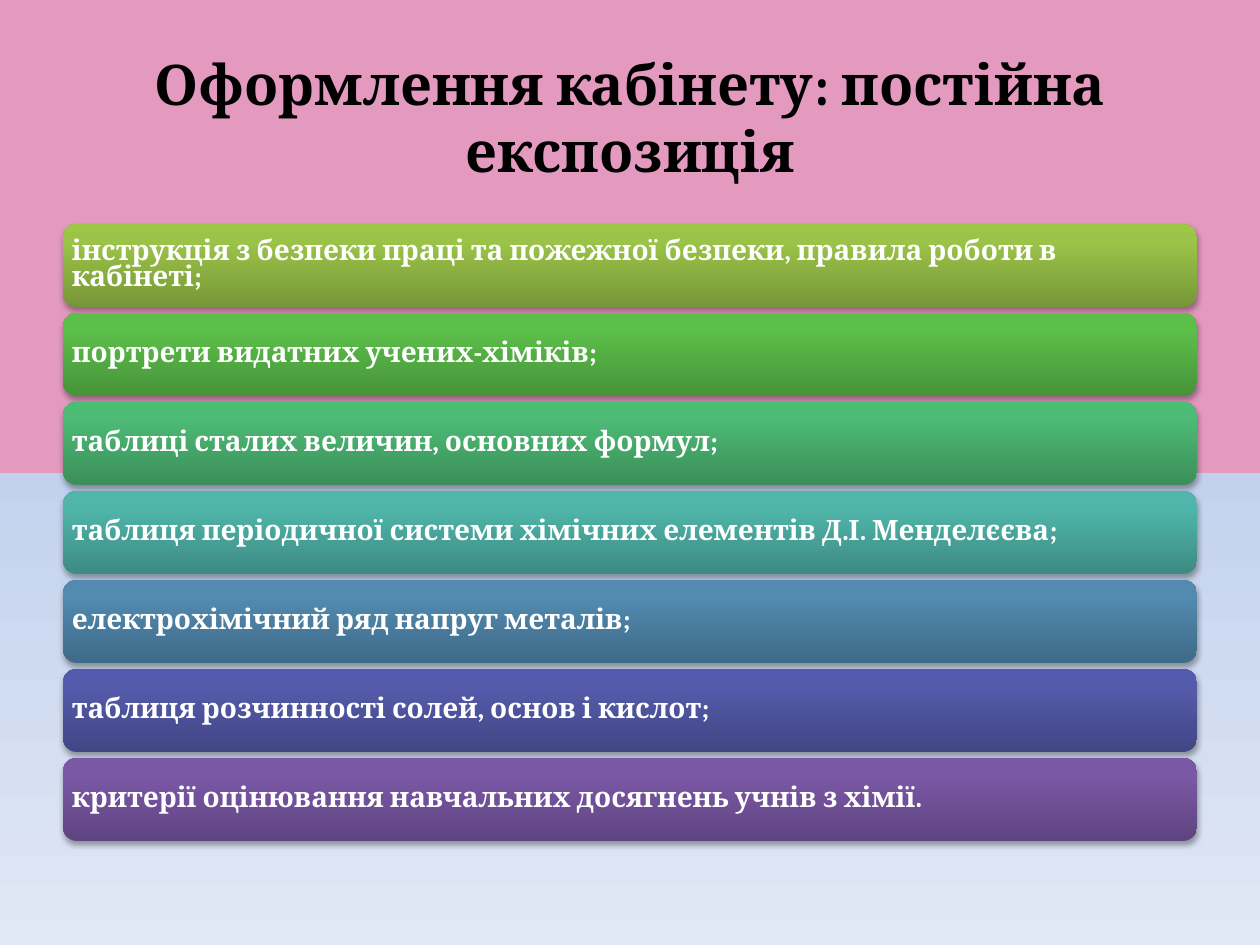
from lxml import etree
from pptx import Presentation
from pptx.dml.color import RGBColor
from pptx.enum.shapes import MSO_SHAPE
from pptx.enum.text import MSO_ANCHOR, MSO_AUTO_SIZE, PP_ALIGN
from pptx.oxml.ns import qn
from pptx.util import Emu, Pt

ROUNDED = MSO_SHAPE.ROUNDED_RECTANGLE
MIDDLE = MSO_ANCHOR.MIDDLE
SHRINK = MSO_AUTO_SIZE.TEXT_TO_FIT_SHAPE
LEFT, CENTER = PP_ALIGN.LEFT, PP_ALIGN.CENTER

FONT = "Cambria"
TITLE = "Оформлення кабінету: постійна експозиція"
BACKGROUND = [(50, "E49ABF"), (50, "C2D1ED"), (100, "E1E8F5")]
ITEMS = [
    ("інструкція з безпеки праці та пожежної безпеки, правила роботи в кабінеті;",
     ("779737", "9BC348", "9DC746")),
    ("портрети видатних учених-хіміків;", ("479339", "5CBF4A", "5BC249")),
    ("таблиці сталих величин, основних формул;", ("3B8F5A", "4DBA75", "4BBD75")),
    ("таблиця періодичної системи хімічних елементів Д.І. Менделєєва;",
     ("3D8B83", "50B5AA", "4EB8AC")),
    ("електрохімічний ряд напруг металів;", ("3F6A88", "528AB0", "518BB3")),
    ("таблиця розчинності солей, основ і кислот;", ("414684", "555BAB", "545AAE")),
    ("критерії оцінювання навчальних досягнень учнів з хімії.",
     ("5F4480", "7B58A6", "7C57A8")),
]
BAR_STOPS = (0, 80, 100)
BAR_LEFT, BAR_TOP, BAR_WIDTH, BAR_HEIGHT, BAR_PITCH = 63, 224, 1134, 83, 89
BAR_INSET = 5


def px(n):
    return Emu(n * 914400 // 126)


def color(value):
    return RGBColor.from_string(value)


def child(parent, tag, **attrs):
    return etree.SubElement(parent, qn(tag), {k: str(v) for k, v in attrs.items()})


def set_gradient(fill, element, stops, angle):
    fill.gradient()
    fill.gradient_angle = angle
    stop_list = next(element.iter(qn("a:gsLst")))
    for stop in list(stop_list):
        stop_list.remove(stop)
    for position, value in stops:
        stop = child(stop_list, "a:gs", pos=position * 1000)
        child(stop, "a:srgbClr", val=value)


def add_shadow(shape):
    shape.shadow.inherit = False
    effects = next(shape.element.iter(qn("a:effectLst")))
    shadow = child(effects, "a:outerShdw", blurRad=Pt(3.1), dist=Pt(1.8),
                   dir=90 * 60000, rotWithShape=0)
    tint = child(shadow, "a:srgbClr", val="000000")
    child(tint, "a:alpha", val=35000)


def write_text(tf, text, size, fill, align, spacing=None):
    tf.word_wrap = True
    tf.vertical_anchor = MIDDLE
    p = tf.paragraphs[0]
    p.alignment = align
    p.line_spacing = spacing
    r = p.add_run()
    r.text = text
    r.font.name = FONT
    r.font.size = Pt(size)
    r.font.bold = True
    r.font.color.rgb = color(fill)


def set_title(s, text):
    sp = s.shapes.title
    sp.left, sp.top, sp.width, sp.height = px(63), px(38), px(1134), px(157)
    write_text(sp.text_frame, text, size=32, fill="000000", align=CENTER)
    sp.text_frame.auto_size = SHRINK


def add_bar(s, top, text, colors):
    sp = s.shapes.add_shape(ROUNDED, px(BAR_LEFT), px(top), px(BAR_WIDTH), px(BAR_HEIGHT))
    set_gradient(sp.fill, sp.element, zip(BAR_STOPS, colors), angle=90)
    sp.line.fill.background()
    add_shadow(sp)
    tf = sp.text_frame
    tf.margin_left = tf.margin_right = tf.margin_top = tf.margin_bottom = px(BAR_INSET)
    write_text(tf, text, size=16, fill="FFFFFF", align=LEFT, spacing=0.8)


def main():
    prs = Presentation()
    prs.slide_width, prs.slide_height = px(1260), px(945)
    s = prs.slides.add_slide(prs.slide_layouts[5])
    set_gradient(s.background.fill, s.element, BACKGROUND, angle=270)
    set_title(s, TITLE)
    for i, (text, colors) in enumerate(ITEMS):
        add_bar(s, BAR_TOP + i * BAR_PITCH, text, colors)
    prs.save("out.pptx")


if __name__ == "__main__":
    main()
